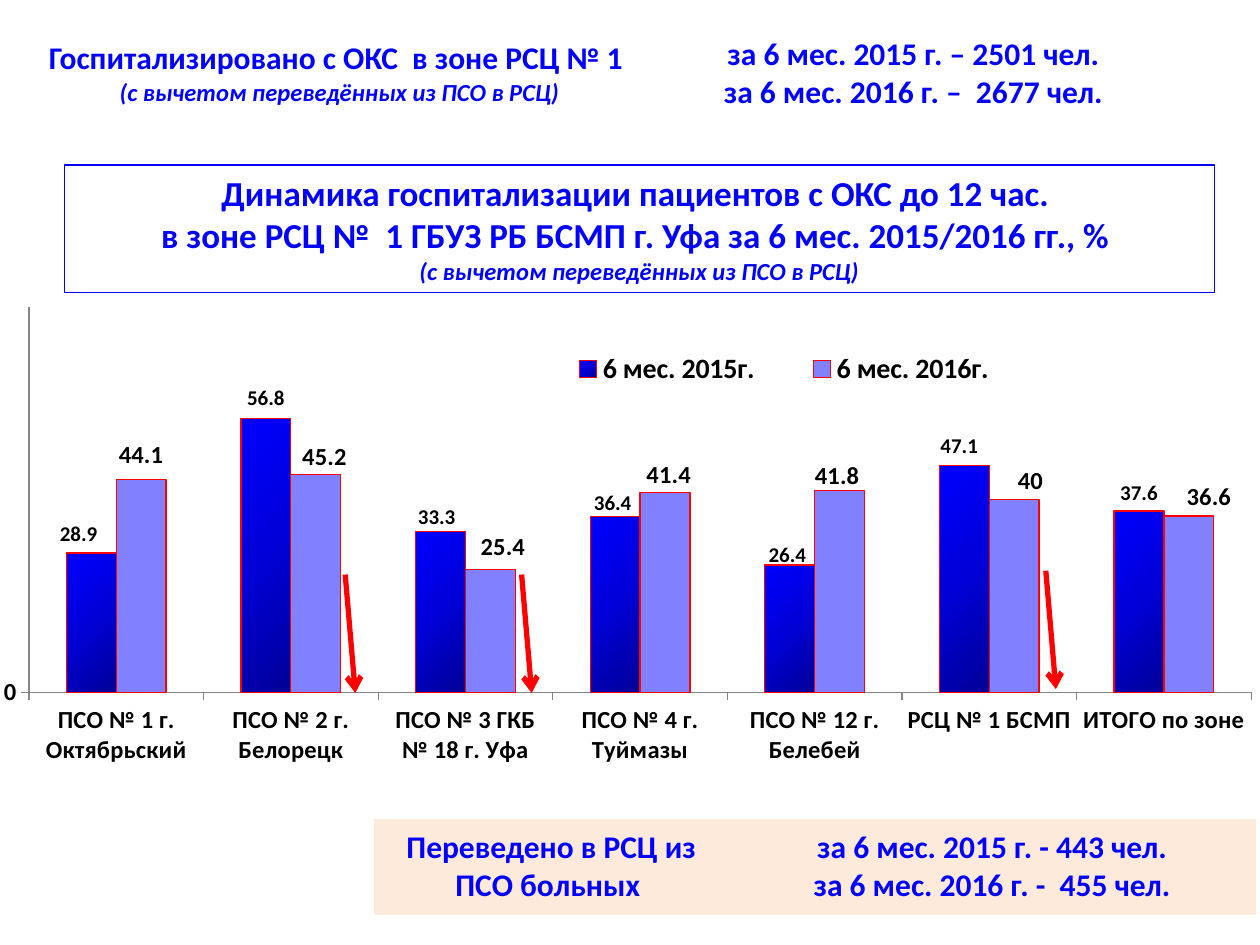
"""Build the slide on hospitalisation dynamics within 12 hours by zone."""
from lxml.etree import SubElement
from pptx import Presentation
from pptx.chart.data import CategoryChartData
from pptx.dml.color import RGBColor
from pptx.enum.chart import XL_CHART_TYPE, XL_LABEL_POSITION, XL_LEGEND_POSITION, XL_TICK_MARK
from pptx.enum.shapes import MSO_CONNECTOR
from pptx.enum.text import MSO_ANCHOR, MSO_AUTO_SIZE, PP_ALIGN
from pptx.oxml.ns import qn
from pptx.util import Inches, Pt

FONT = "Calibri"
COLORS = {"blue": "0000FF", "white": "FFFFFF", "peach": "FDEADA", "red": "FF0000",
          "black": "000000", "axis": "868686", "light": "8181FF"}
GRADIENT = [(0, "000097"), (50, "0000D7"), (100, "0000FF")]
NOTE = "(с вычетом переведённых из ПСО в РСЦ)"
TITLE = [("Динамика госпитализации пациентов с ОКС до 12 час. ", 20),
         ("в зоне РСЦ №  1 ГБУЗ РБ БСМП г. Уфа за 6 мес. 2015/2016 гг., % ", 20),
         (NOTE, 14)]
TABLES = [
    {"at": (0.22, 0.21), "cols": (4.95, 4.16), "height": 0.75, "fill": "white", "cells": [
        [("Госпитализировано с ОКС  в зоне РСЦ № 1 \v" + NOTE, 18)],
        [("за 6 мес. 2015 г. – 2501 чел.", 18), ("за 6 мес. 2016 г. –  2677 чел.", 18)]]},
    {"at": (2.97, 6.5), "cols": (2.81, 4.19), "height": 0.76, "fill": "peach", "cells": [
        [("Переведено в РСЦ из ПСО больных ", 18)],
        [("за 6 мес. 2015 г. - 443 чел.", 18), ("за 6 мес. 2016 г. -  455 чел.", 18)]]},
]
CATEGORIES = ["ПСО № 1 г. Октябрьский", "ПСО № 2 г. Белорецк", "ПСО № 3 ГКБ № 18 г. Уфа",
              "ПСО № 4 г. Туймазы", "ПСО № 12 г. Белебей", "РСЦ № 1 БСМП", "ИТОГО по зоне "]
SERIES = [
    {"name": "6 мес. 2015г.", "values": [28.9, 56.8, 33.3, 36.4, 26.4, 47.1, 37.6], "size": 12,
     "shifts": [(-0.1, -0.01), (0, -0.02), (-0.03, 0.02), (-0.02, 0.03), (-0.02, 0.06),
                (-0.04, -0.01)]},
    {"name": "6 мес. 2016г.", "values": [44.1, 45.2, 25.4, 41.4, 41.8, 40, 36.6], "size": 14,
     "shifts": [(0, -0.04), (0.07, 0.02), (0.1, -0.02), (0.03, 0.02), (-0.02, 0.04),
                (0.13, 0.01), (0.16, 0.01)]},
]
CHART = (-0.37, 1.85, 10.9, 4.5)
PLOT = {"x": 0.055, "y": 0.13, "w": 0.89, "h": 0.68}
LEGEND = {"x": 0.42, "y": 0.19, "w": 0.37, "h": 0.1}
ARROWS = [(2.74, 4.56), (4.14, 4.56), (8.3, 4.53)]
ARROW_SIZE = (0.08, 0.94)


def rgb(name):
    return RGBColor.from_string(COLORS[name])


def style(font, size, color="black"):
    font.name, font.size, font.bold = FONT, Pt(size), True
    font.color.rgb = rgb(color)


def write(tf, lines):
    for i, (text, size) in enumerate(lines):
        p = tf.paragraphs[0] if i == 0 else tf.add_paragraph()
        p.text, p.alignment = text, PP_ALIGN.CENTER
        for r in p.runs:
            style(r.font, 14 if r.text == NOTE else size, "blue")
            r.font.italic = r.text == NOTE


def set_layout(layout, values, inner=False):
    for child in list(layout):
        layout.remove(child)
    manual = SubElement(layout, qn("c:manualLayout"))
    if inner:
        SubElement(manual, qn("c:layoutTarget"), val="inner")
    if "w" in values:
        for key in "xy":
            SubElement(manual, qn(f"c:{key}Mode"), val="edge")
    for key, value in values.items():
        SubElement(manual, qn(f"c:{key}"), val=f"{value:.4f}")


def add_layout(parent, index, values, inner=False):
    layout = parent.find(qn("c:layout"))
    if layout is None:
        layout = SubElement(parent, qn("c:layout"))
        parent.insert(index, layout)
    set_layout(layout, values, inner)


def add_title(s):
    sp = s.shapes.title
    sp.left, sp.top, sp.width, sp.height = map(Inches, (0.51, 1.31, 9.13, 1.01))
    sp.fill.solid()
    sp.fill.fore_color.rgb = rgb("white")
    sp.line.color.rgb = rgb("blue")
    sp.line.width = Pt(0.75)
    tf = sp.text_frame
    tf.auto_size, tf.word_wrap = MSO_AUTO_SIZE.NONE, True
    tf.vertical_anchor = MSO_ANCHOR.MIDDLE
    write(tf, TITLE)


def add_table(s, spec):
    frame = s.shapes.add_table(1, 2, *map(Inches, (*spec["at"], sum(spec["cols"]), spec["height"])))
    table = frame.table
    table.first_row = table.horz_banding = False
    style_id = frame._element.find(".//" + qn("a:tableStyleId"))
    style_id.text = "{2D5ABB26-0587-4C30-8999-92F81FD0307C}"
    for i, (width, lines) in enumerate(zip(spec["cols"], spec["cells"])):
        table.columns[i].width = Inches(width)
        cell = table.cell(0, i)
        cell.fill.solid()
        cell.fill.fore_color.rgb = rgb(spec["fill"])
        cell.vertical_anchor = MSO_ANCHOR.MIDDLE
        write(cell.text_frame, lines)


def fill_gradient(ser):
    ser.format.fill.gradient()
    ser.format.fill.gradient_angle = 135
    stops = ser._element.find(".//" + qn("a:gsLst"))
    for child in list(stops):
        stops.remove(child)
    for pos, color in GRADIENT:
        stop = SubElement(stops, qn("a:gs"), pos=str(pos * 1000))
        SubElement(stop, qn("a:srgbClr"), val=color)


def add_labels(ser, spec):
    labels = ser.data_labels
    labels.show_value = True
    labels.position = XL_LABEL_POSITION.OUTSIDE_END
    style(labels.font, spec["size"])
    for i, (dx, dy) in enumerate(spec["shifts"]):
        label = ser.points[i].data_label
        label.position = XL_LABEL_POSITION.OUTSIDE_END
        style(label.font, spec["size"])
        item = labels._element.findall(qn("c:dLbl"))[i]
        add_layout(item, 1, {"x": dx / CHART[2], "y": dy / CHART[3]})


def add_chart(s):
    data = CategoryChartData()
    data.categories = CATEGORIES
    for spec in SERIES:
        data.add_series(spec["name"], spec["values"])
    chart = s.shapes.add_chart(XL_CHART_TYPE.COLUMN_CLUSTERED, *map(Inches, CHART), data).chart
    chart.has_title = False
    chart.font.name, chart.font.size = FONT, Pt(18)
    plot = chart.plots[0]
    plot.gap_width, plot.overlap, plot.vary_by_categories = 150, 0, False
    for ser, spec in zip(plot.series, SERIES):
        ser.format.line.color.rgb = rgb("red")
        ser.format.line.width = Pt(0.75)
        add_labels(ser, spec)
    fill_gradient(plot.series[0])
    plot.series[1].format.fill.solid()
    plot.series[1].format.fill.fore_color.rgb = rgb("light")
    for axis in (chart.category_axis, chart.value_axis):
        style(axis.tick_labels.font, 14)
        axis.format.line.color.rgb = rgb("axis")
        axis.major_tick_mark = XL_TICK_MARK.OUTSIDE
    axis = chart.value_axis
    axis.minimum_scale, axis.maximum_scale, axis.major_unit = 0, 80, 100
    axis.major_gridlines.format.line.color.rgb = rgb("axis")
    chart.has_legend = True
    chart.legend.position = XL_LEGEND_POSITION.TOP
    chart.legend.include_in_layout = False
    style(chart.legend.font, 16)
    add_layout(chart.legend._element, 1, LEGEND)
    add_layout(chart._chartSpace.find(".//" + qn("c:plotArea")), 0, PLOT, True)


def add_arrow(s, x, y):
    dx, dy = ARROW_SIZE
    line = s.shapes.add_connector(MSO_CONNECTOR.STRAIGHT, *map(Inches, (x, y, x + dx, y + dy)))
    line.line.color.rgb = rgb("red")
    line.line.width = Pt(3)
    SubElement(line.line._get_or_add_ln(), qn("a:tailEnd"), type="arrow")
    SubElement(line._element.spPr, qn("a:effectLst"))


def main():
    prs = Presentation()
    prs.slide_width, prs.slide_height = Inches(10), Inches(7.5)
    s = prs.slides.add_slide(prs.slide_layouts[5])
    add_title(s)
    for spec in TABLES:
        add_table(s, spec)
    add_chart(s)
    for x, y in ARROWS:
        add_arrow(s, x, y)
    prs.save("out.pptx")


if __name__ == "__main__":
    main()
